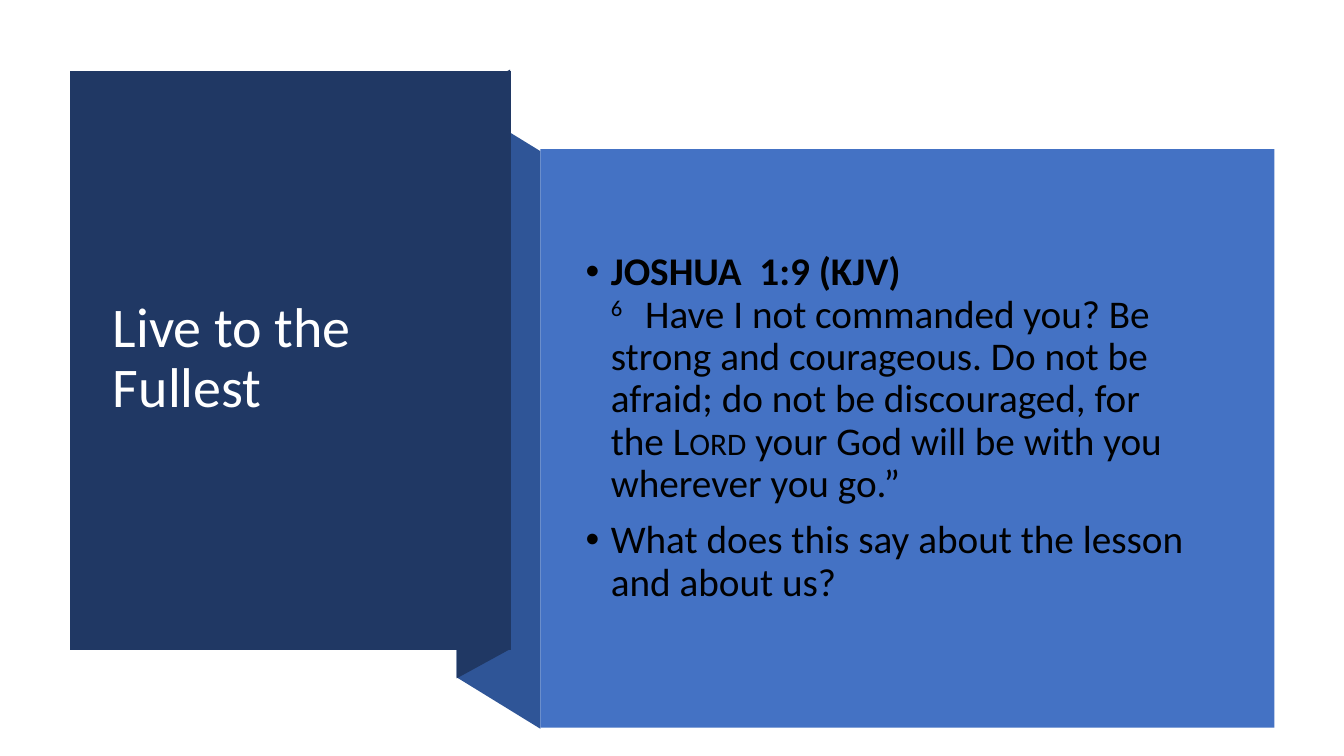
from dataclasses import dataclass

from lxml import etree
from pptx import Presentation
from pptx.dml.color import RGBColor
from pptx.enum import shapes as shape_kinds, text as text_kinds
from pptx.oxml import ns
from pptx.util import Inches, Pt

FONT = "Calibri"
NAVY, FOLD_BLUE, PANEL_BLUE = "203864", "2F5597", "4472C4"
WHITE, BLACK = "FFFFFF", "000000"
HARD_SPACE = chr(160)


@dataclass
class Ribbon:
    color: str
    points: list[tuple[float, float]]


@dataclass
class Phrase:
    words: str
    bold: bool = False
    superscript: bool = False
    small_caps: bool = False
    break_after: bool = False


RIBBONS = [
    Ribbon(FOLD_BLUE, [(5.36, 7.23), (4.53, 6.72), (4.53, 0.99), (5.36, 1.5)]),
    Ribbon(NAVY, [(5.06, 6.44), (4.53, 6.73), (4.53, 0.98), (5.06, 0.69)]),
    Ribbon(NAVY, [(0.69, 0.7), (5.07, 0.7), (5.07, 6.45), (0.69, 6.45)]),
]

BULLETS = [
    [
        Phrase("JOSHUA  1:9 (KJV) ", bold=True, break_after=True),
        Phrase("6 ", superscript=True),
        Phrase(f"{HARD_SPACE} Have I not commanded you? Be strong and "
               f"courageous. Do not be afraid;{HARD_SPACE}do not be "
               f"discouraged,{HARD_SPACE}for the{HARD_SPACE}"),
        Phrase("Lord", small_caps=True),
        Phrase(f"{HARD_SPACE}your God will be with you wherever you go.”"),
    ],
    [Phrase("What does this say about the lesson and about us?")],
]


def rgb(color: str) -> RGBColor:
    return RGBColor.from_string(color)


def paint(shape, color: str) -> None:
    shape.fill.solid()
    shape.fill.fore_color.rgb = rgb(color)
    shape.line.fill.background()
    shape.shadow.inherit = False


def draw_ribbon(slide, ribbon: Ribbon):
    start, *rest = [(Inches(x), Inches(y)) for x, y in ribbon.points]
    builder = slide.shapes.build_freeform(*start)
    builder.add_line_segments(rest, close=True)
    shape = builder.convert_to_shape()
    paint(shape, ribbon.color)
    return shape


def prepare_frame(frame) -> None:
    frame.word_wrap = True
    frame.auto_size = text_kinds.MSO_AUTO_SIZE.NONE
    frame.vertical_anchor = text_kinds.MSO_ANCHOR.MIDDLE


def prepare_paragraph(paragraph) -> None:
    paragraph.alignment = text_kinds.PP_ALIGN.LEFT
    paragraph.line_spacing = 0.9


def add_phrase(paragraph, phrase: Phrase, size: float, color: str) -> None:
    run = paragraph.add_run()
    run.text = phrase.words
    run.font.name = FONT
    run.font.size = Pt(size)
    run.font.bold = phrase.bold
    run.font.color.rgb = rgb(color)
    properties = run._r.get_or_add_rPr()
    if phrase.superscript:
        properties.set("baseline", "30000")
    if phrase.small_caps:
        properties.set("cap", "small")
    if phrase.break_after:
        paragraph.add_line_break()


def add_bullet(paragraph) -> None:
    properties = paragraph._p.get_or_add_pPr()
    properties.set("marL", str(Inches(0.25)))
    properties.set("indent", str(-Inches(0.25)))
    etree.SubElement(properties, ns.qn("a:buFont")).set("typeface", "Arial")
    etree.SubElement(properties, ns.qn("a:buChar")).set("char", "•")


def fill_title(title) -> None:
    title.left, title.top = Inches(1.02), Inches(1.07)
    title.width, title.height = Inches(3.71), Inches(4.99)
    prepare_frame(title.text_frame)
    heading = title.text_frame.paragraphs[0]
    prepare_paragraph(heading)
    add_phrase(heading, Phrase("Live to the Fullest"), 40, WHITE)


def add_verse(slide) -> None:
    panel = slide.shapes.add_shape(
        shape_kinds.MSO_SHAPE.RECTANGLE,
        Inches(5.36), Inches(1.48), Inches(7.28), Inches(5.74))
    paint(panel, PANEL_BLUE)
    verse = slide.shapes.add_textbox(
        Inches(5.71), Inches(1.88), Inches(6.51), Inches(4.74)).text_frame
    prepare_frame(verse)
    for index, phrases in enumerate(BULLETS):
        paragraph = verse.add_paragraph() if index else verse.paragraphs[0]
        prepare_paragraph(paragraph)
        paragraph.space_before = Pt(10)
        add_bullet(paragraph)
        for phrase in phrases:
            add_phrase(paragraph, phrase, 28, BLACK)


def main() -> None:
    deck = Presentation()
    deck.slide_width, deck.slide_height = Inches(13.33), Inches(7.5)
    slide = deck.slides.add_slide(deck.slide_layouts[5])
    title = slide.shapes.title
    for ribbon in RIBBONS:
        front = draw_ribbon(slide, ribbon)
    front.element.addnext(title.element)
    fill_title(title)
    add_verse(slide)
    deck.save("out.pptx")


if __name__ == "__main__":
    main()
